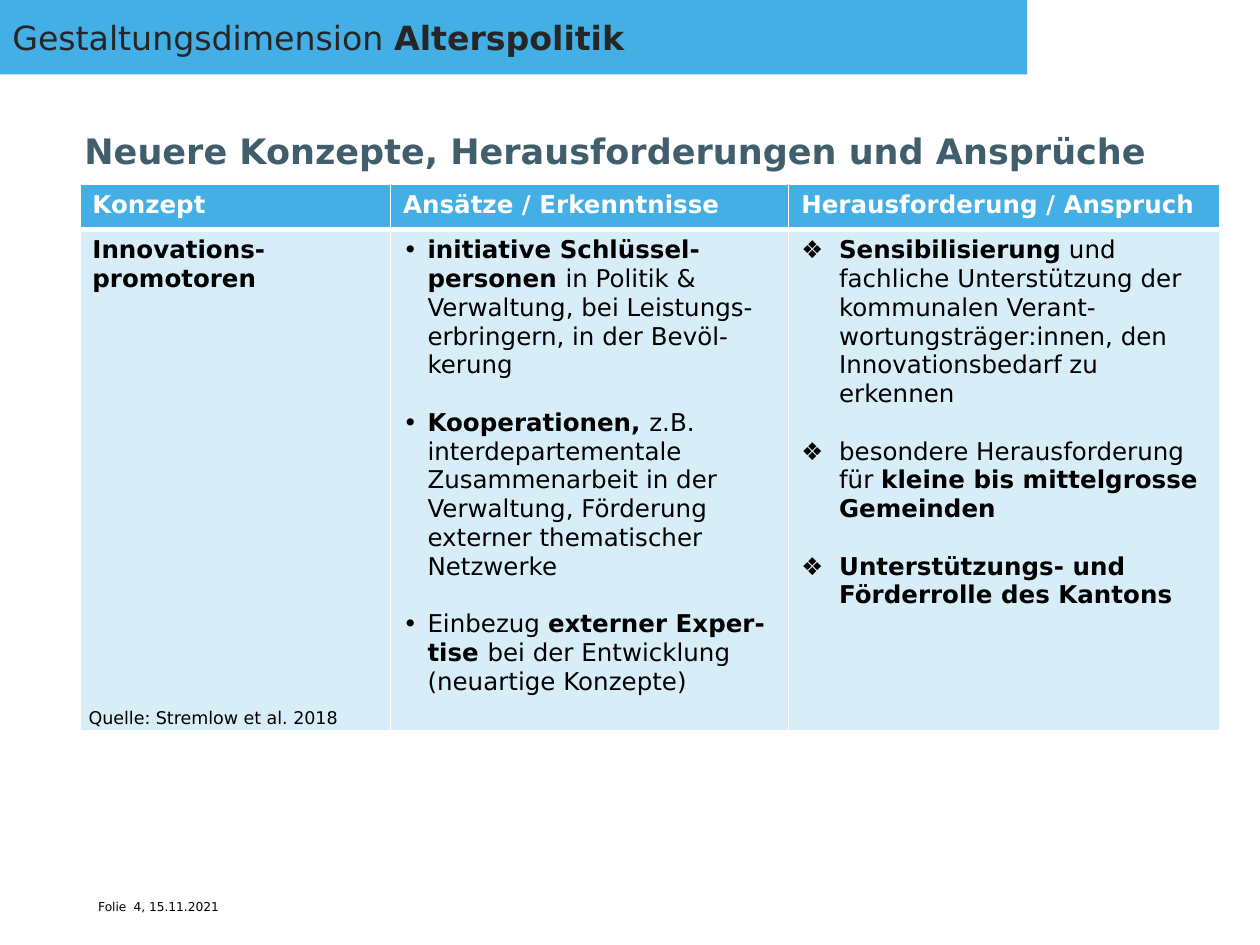
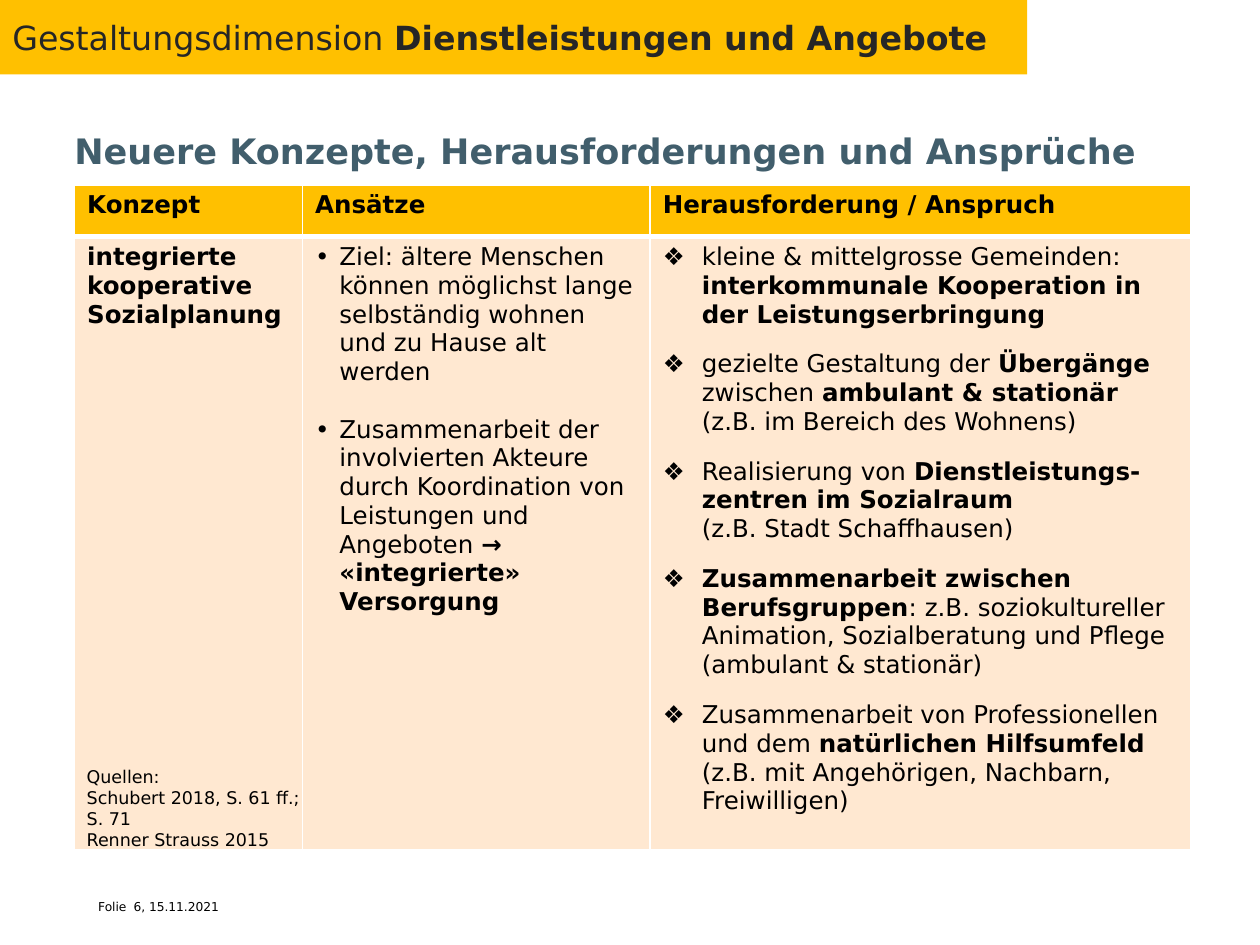
"""Builds two slides on concepts and challenges in ageing policy."""
import copy

import lxml.etree
import pptx
import pptx.dml.color
import pptx.enum.shapes
import pptx.enum.text
import pptx.oxml.ns
import pptx.util

Pt = pptx.util.Pt
RGBColor = pptx.dml.color.RGBColor
Anchor = pptx.enum.text.MSO_ANCHOR
qn = pptx.oxml.ns.qn

FONT = "DejaVu Sans"
BLACK = RGBColor(0x00, 0x00, 0x00)
WHITE = RGBColor(0xFF, 0xFF, 0xFF)
CHARCOAL = RGBColor(0x26, 0x26, 0x26)
SLATE = RGBColor(0x41, 0x5E, 0x6C)
BLUE = RGBColor(0x43, 0xAF, 0xE5)
PALE_BLUE = RGBColor(0xD7, 0xEE, 0xF9)
AMBER = RGBColor(0xFF, 0xC0, 0x00)
PALE_ORANGE = RGBColor(0xFF, 0xE8, 0xD1)

TITLE = "Neuere Konzepte, Herausforderungen und Ansprüche"
DATE = "15.11.2021"
BLANK_LINE = 16.4
DOT = {"bullet": "•", "indent": 13.9, "gap": BLANK_LINE}
DIAMOND = {"bullet": "❖", "indent": 21.6, "gap": BLANK_LINE}
TIGHT_DIAMOND = {"bullet": "❖", "indent": 22.3, "gap": 12}


def write_text(frame, text, size=14, color=BLACK, bold=False, bullet=None, indent=0, gap=0):
    """Fill a frame with one paragraph per item; asterisks switch bold on and off."""
    lines = [text] if isinstance(text, str) else text
    for index, line in enumerate(lines):
        para = frame.add_paragraph() if index else frame.paragraphs[0]
        para.alignment = pptx.enum.text.PP_ALIGN.LEFT
        para.space_before = Pt(gap if index else 0)
        if bullet:
            properties = para._p.get_or_add_pPr()
            properties.set("marL", str(Pt(indent)))
            properties.set("indent", str(-Pt(indent)))
            lxml.etree.SubElement(properties, qn("a:buFont"), typeface=FONT)
            lxml.etree.SubElement(properties, qn("a:buChar"), char=bullet)
        for position, part in enumerate(line.split("*")):
            for row, words in enumerate(part.split("\n")):
                if row:
                    para.add_line_break()
                    para._p[-1].append(copy.deepcopy(span._r.rPr))
                if words:
                    span = para.add_run()
                    span.text = words
                    span.font.name = FONT
                    span.font.size = Pt(size)
                    span.font.bold = bold or position % 2 == 1
                    span.font.color.rgb = color


class Builder:
    """Holds the deck, its style and the current slide."""

    def __init__(self):
        self.deck = pptx.Presentation()
        self.deck.slide_width, self.deck.slide_height = Pt(720), Pt(540)
        self.page = None

    def add_page(self, number, theme, accent, title_left):
        """Start a slide with its title, coloured band and footer."""
        self.page = self.deck.slides.add_slide(self.deck.slide_layouts[5])
        title = self.page.shapes.title
        title.left, title.top, title.width, title.height = (
            Pt(value) for value in (title_left, 60.5, 669, 43.2))
        self.format_frame(title.text_frame, 5.75, Anchor.BOTTOM)
        write_text(title.text_frame, TITLE, size=20, color=SLATE, bold=True)
        self.add_band(f"Gestaltungsdimension *{theme}*", accent)
        self.add_text("Folie", 50.4, 508.3, 213, 21.6, size=7, inset=5.75)
        self.add_text(f"{number}, {DATE}", 70.6, 508.3, 638.6, 31.7, size=7, inset=5.75)

    def format_frame(self, frame, inset, anchor):
        """Set margins, wrapping and anchor of a text frame."""
        frame.word_wrap = True
        frame.auto_size = pptx.enum.text.MSO_AUTO_SIZE.NONE
        frame.vertical_anchor = anchor
        frame.margin_left = frame.margin_right = Pt(inset)
        frame.margin_top = frame.margin_bottom = Pt(min(inset, 5.75))

    def add_band(self, text, color):
        """Draw the coloured band along the top edge."""
        band = self.page.shapes.add_shape(
            pptx.enum.shapes.MSO_SHAPE.RECTANGLE, Pt(0), Pt(-0.5), Pt(587), Pt(43))
        band.shadow.inherit = False
        band.fill.solid()
        band.fill.fore_color.rgb = color
        band.line.fill.background()
        self.format_frame(band.text_frame, 7.2, Anchor.MIDDLE)
        write_text(band.text_frame, text, size=19, color=CHARCOAL)

    def add_text(self, text, left, top, width, height, size=10, inset=None):
        """Add a text box, with default margins unless an inset is given."""
        box = self.page.shapes.add_textbox(Pt(left), Pt(top), Pt(width), Pt(height))
        box.text_frame.word_wrap = True
        if inset:
            self.format_frame(box.text_frame, inset, Anchor.TOP)
        write_text(box.text_frame, text, size=size)

    def add_table(self, left, top, widths, heights, headers, entries, fills, header_color):
        """Add a header row and a body row; each entry is text and its format."""
        table = self.page.shapes.add_table(
            2, len(widths), Pt(left), Pt(top), Pt(sum(widths)), Pt(sum(heights))).table
        for row, height in zip(table.rows, heights):
            row.height = Pt(height)
        header_style = {"color": header_color, "bold": True}
        rows = [[(header, header_style) for header in headers], entries]
        for column, width in enumerate(widths):
            table.columns[column].width = Pt(width)
            for row, fill in enumerate(fills):
                cell = table.cell(row, column)
                text, style = rows[row][column]
                self.add_borders(cell, {"L": 1, "R": 1, "T": 3 if row else 1, "B": 1 if row else 3})
                cell.fill.solid()
                cell.fill.fore_color.rgb = fill
                write_text(cell.text_frame, text, **style)

    def add_borders(self, cell, weights):
        """Give each side of a cell a white line of its own weight."""
        properties = cell._tc.get_or_add_tcPr()
        for side, weight in weights.items():
            line = lxml.etree.SubElement(properties, qn(f"a:ln{side}"), w=str(Pt(weight)))
            fill = lxml.etree.SubElement(line, qn("a:solidFill"))
            lxml.etree.SubElement(fill, qn("a:srgbClr"), val=str(WHITE))


def build_policy(builder):
    """Build the slide on ageing policy."""
    builder.add_page(4, "Alterspolitik", BLUE, 42.5)
    approaches = [
        "*initiative Schlüssel-personen *in Politik & Verwaltung, bei Leistungs-erbringern, "
        "in der Bevöl-kerung",
        "*Kooperationen, *z.B.\ninterdepartementale Zusammenarbeit in der Verwaltung, "
        "Förderung externer thematischer Netzwerke",
        "Einbezug *externer Exper-tise *bei der Entwicklung (neuartige Konzepte)",
    ]
    challenges = [
        "*Sensibilisierung* und fachliche Unterstützung der kommunalen "
        "Verant-wortungsträger:innen, den Innovationsbedarf zu erkennen",
        "besondere Herausforderung für *kleine bis mittelgrosse Gemeinden*",
        "*Unterstützungs- und Förderrolle des Kantons*",
    ]
    builder.add_table(
        45.6, 105.4, [177.6, 227.5, 246.2], [25.9, 286.5],
        ["Konzept", "Ansätze / Erkenntnisse", "Herausforderung / Anspruch"],
        [("Innovations-promotoren", {"bold": True}), (approaches, DOT), (challenges, DIAMOND)],
        [BLUE, PALE_BLUE], WHITE)
    builder.add_text("Quelle: Stremlow et al. 2018", 43.6, 400.3, 160.6, 19.4)


def build_services(builder):
    """Build the slide on services and offers."""
    builder.add_page(6, "Dienstleistungen und Angebote", AMBER, 36.7)
    approaches = [
        "Ziel: ältere Menschen können möglichst lange selbständig wohnen und zu Hause alt werden",
        "Zusammenarbeit der involvierten Akteure durch Koordination von Leistungen und "
        "Angeboten *→ «integrierte» Versorgung*",
    ]
    challenges = [
        "kleine & mittelgrosse Gemeinden: *interkommunale Kooperation in der "
        "Leistungserbringung*",
        "gezielte Gestaltung der *Übergänge* zwischen *ambulant & stationär *"
        "(z.B. im Bereich des Wohnens)",
        "Realisierung von *Dienstleistungs-zentren im Sozialraum\n*(z.B. Stadt Schaffhausen)",
        "*Zusammenarbeit zwischen Berufsgruppen*: z.B. soziokultureller Animation, "
        "Sozialberatung und Pflege (ambulant & stationär)",
        "Zusammenarbeit von Professionellen und dem *natürlichen Hilfsumfeld *"
        "(z.B. mit Angehörigen, Nachbarn, Freiwilligen)",
    ]
    builder.add_table(
        42.6, 105.6, [130.3, 198.7, 308.9], [29.5, 350.6],
        ["Konzept", "Ansätze", "Herausforderung / Anspruch"],
        [("integrierte kooperative Sozialplanung", {"bold": True}), (approaches, DOT),
         (challenges, TIGHT_DIAMOND)],
        [AMBER, PALE_ORANGE], BLACK)
    builder.add_text(
        ["Quellen:", "Schubert 2018, S. 61 ff.; S. 71", "Renner Strauss 2015"],
        42.5, 434.2, 139, 55.4)


def main():
    """Build both slides and save the deck."""
    builder = Builder()
    build_policy(builder)
    build_services(builder)
    builder.deck.save("out.pptx")


if __name__ == "__main__":
    main()
